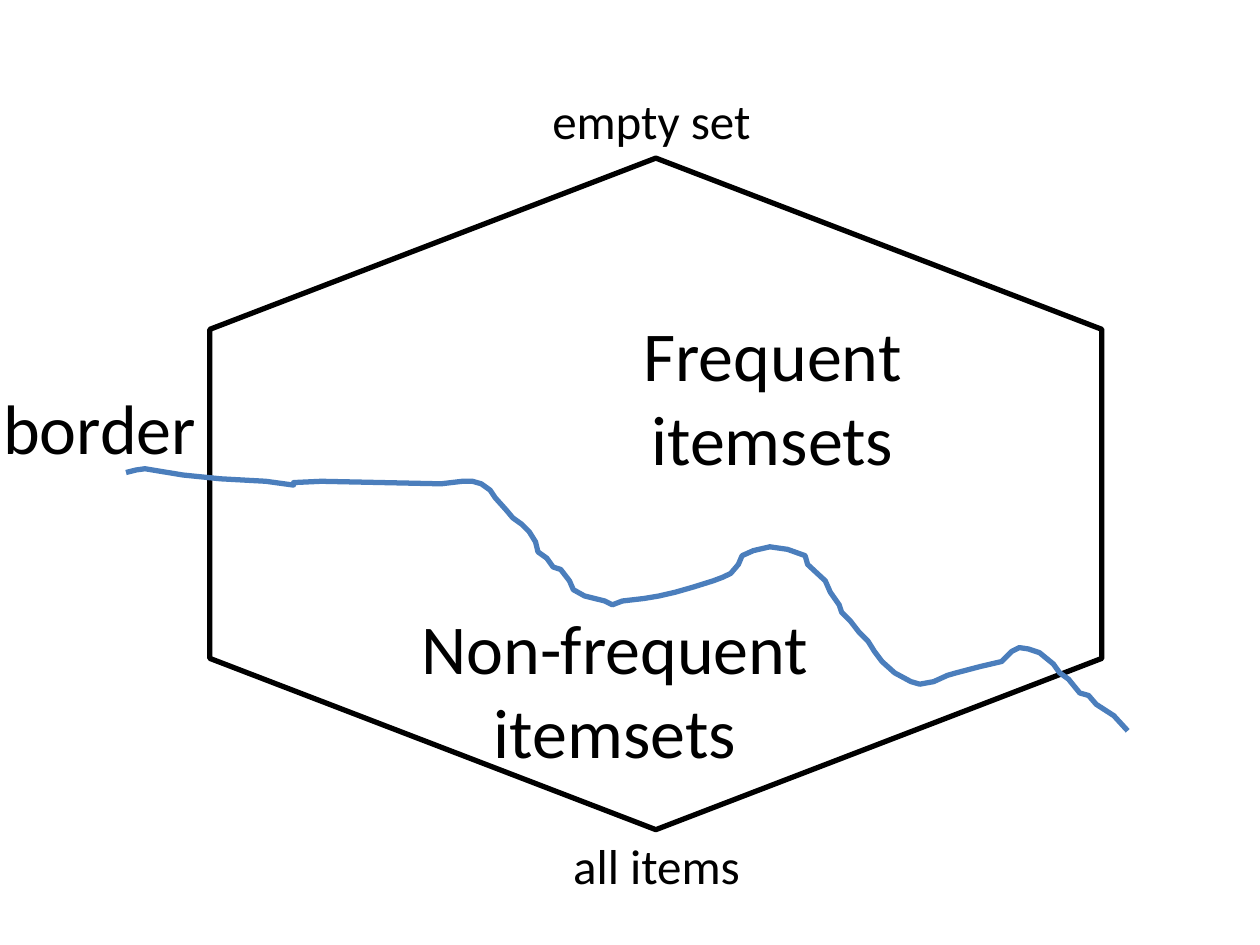
from dataclasses import dataclass

from pptx import Presentation
from pptx import util as u
from pptx.dml.color import RGBColor
from pptx.enum import shapes, text


@dataclass(frozen=True)
class Theme:
    font: str = "Calibri"
    ink: RGBColor = RGBColor(0x00, 0x00, 0x00)
    border: RGBColor = RGBColor(0x4B, 0x7E, 0xBC)
    small: int = 28
    large: int = 40
    stroke: int = 3


THEME = Theme()
UNIT = 2.54  # layout grid unit in centimetres

# Grid points along the border between the two regions
BORDER_POINTS = [
    (1, 3.75), (1.08, 3.73), (1.15, 3.72), (1.27, 3.74), (1.45, 3.77),
    (1.75, 3.8), (2.11, 3.82), (2.33, 3.85), (2.33, 3.83), (2.55, 3.82),
    (3.5, 3.84), (3.67, 3.82), (3.75, 3.82), (3.82, 3.84), (3.89, 3.89),
    (3.93, 3.95), (4.02, 4.05), (4.07, 4.11), (4.14, 4.16), (4.2, 4.22),
    (4.25, 4.3), (4.27, 4.38), (4.34, 4.43), (4.39, 4.5), (4.45, 4.52),
    (4.52, 4.61), (4.55, 4.68), (4.64, 4.73), (4.8, 4.77), (4.86, 4.8),
    (4.94, 4.77), (5.11, 4.75), (5.23, 4.73), (5.36, 4.7), (5.5, 4.66),
    (5.66, 4.61), (5.74, 4.58), (5.8, 4.55), (5.86, 4.48), (5.89, 4.41),
    (5.98, 4.37), (6.11, 4.34), (6.25, 4.36), (6.39, 4.41), (6.41, 4.48),
    (6.55, 4.61), (6.59, 4.7), (6.66, 4.8), (6.68, 4.86), (6.75, 4.93),
    (6.82, 5.02), (6.89, 5.09), (6.94, 5.17), (7, 5.25), (7.1, 5.34),
    (7.23, 5.41), (7.3, 5.43), (7.41, 5.41), (7.52, 5.36), (7.59, 5.34),
    (7.78, 5.29), (7.95, 5.25), (8.03, 5.17), (8.09, 5.14), (8.16, 5.15),
    (8.25, 5.18), (8.36, 5.27), (8.41, 5.34), (8.48, 5.39), (8.57, 5.5),
    (8.64, 5.52), (8.7, 5.59), (8.84, 5.68), (8.95, 5.8),
]


def grid(value):
    return u.Cm(value * UNIT)


def style_outline(shape, color):
    shape.shadow.inherit = False
    shape.fill.background()
    shape.line.color.rgb = color
    shape.line.width = u.Pt(THEME.stroke)


def add_lattice(page):
    hexagon = page.shapes.add_shape(
        shapes.MSO_SHAPE.HEXAGON, *map(grid, (2.54, 0.38, 5.33, 7.08)))
    hexagon.rotation = 90
    hexagon.adjustments[0] = 0.255
    style_outline(hexagon, THEME.ink)


def add_border(page):
    start, *rest = [(grid(x), grid(y)) for x, y in BORDER_POINTS]
    builder = page.shapes.build_freeform(*start)
    builder.add_line_segments(rest, close=False)
    style_outline(builder.convert_to_shape(), THEME.border)


def add_label(page, wording, bounds, size):
    box = page.shapes.add_textbox(*map(grid, bounds))
    frame = box.text_frame
    frame.word_wrap = True
    frame.auto_size = text.MSO_AUTO_SIZE.SHAPE_TO_FIT_TEXT
    para = frame.paragraphs[0]
    para.text = wording
    para.alignment = text.PP_ALIGN.CENTER
    para.font.name = THEME.font
    para.font.size = u.Pt(size)
    para.font.color.rgb = THEME.ink


def main():
    deck = Presentation()
    deck.slide_width, deck.slide_height = grid(10), grid(7.5)
    page = deck.slides.add_slide(deck.slide_layouts[6])

    # Itemset lattice with its two ends
    add_lattice(page)
    add_label(page, "all items", (4.25, 6.58, 1.92, 0.57), THEME.small)
    add_label(page, "empty set", (4.17, 0.67, 2, 0.57), THEME.small)

    # Border and the regions on either side
    add_border(page)
    for wording, bounds in (
        ("Frequent itemsets", (4.17, 2.42, 3.92, 1.45)),
        ("Non-frequent itemsets", (2.92, 4.75, 3.92, 1.45)),
        ("border", (-1.17, 3, 3.92, 0.77)),
    ):
        add_label(page, wording, bounds, THEME.large)

    deck.save("out.pptx")


if __name__ == "__main__":
    main()
